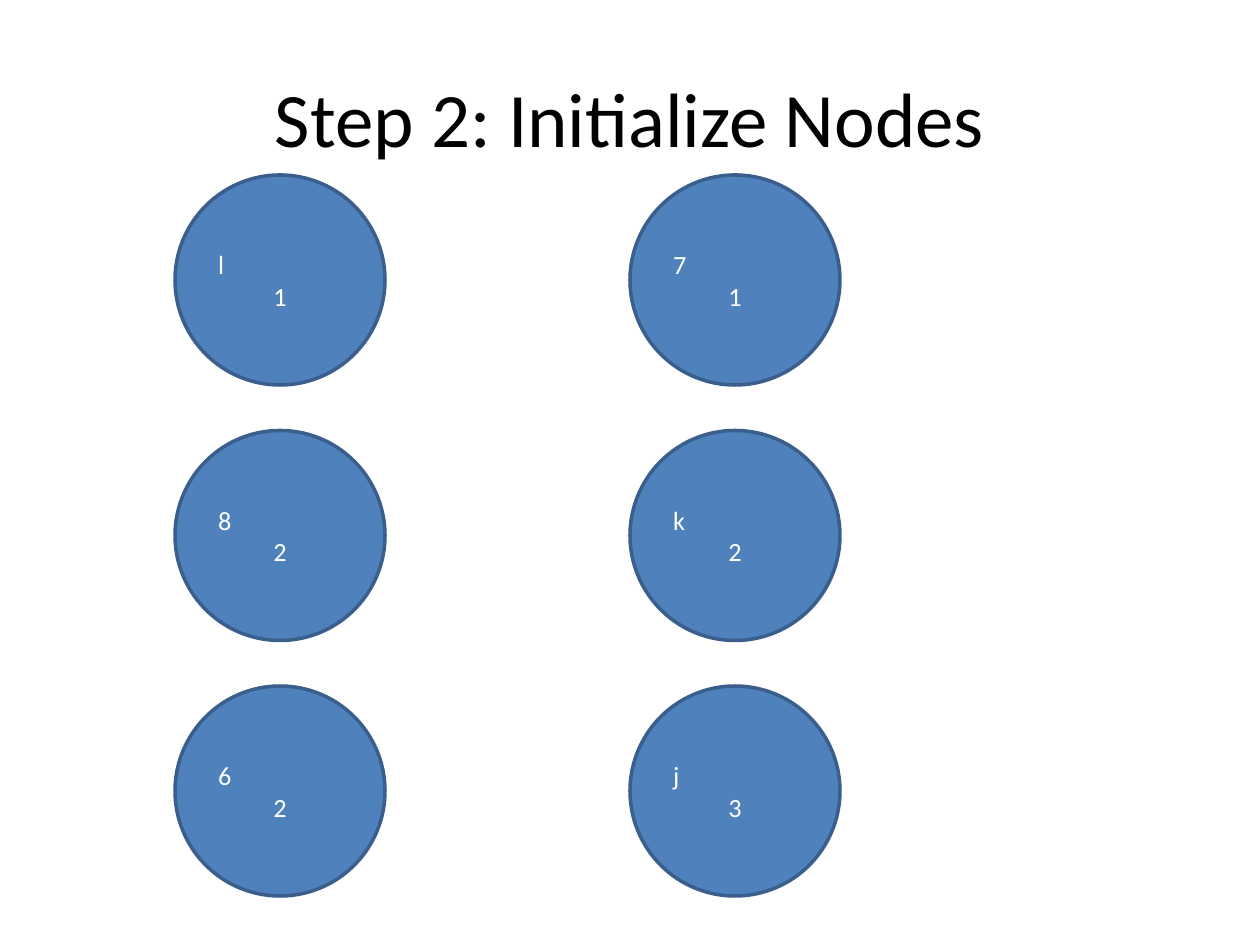
from pptx import Presentation
from pptx.dml.color import RGBColor
from pptx.enum import shapes, text
from pptx.util import Pt

COLORS = {"title": "000000", "node": "4F81BD", "outline": "3A5F8C", "label": "FFFFFF"}
TITLE_FORMAT = {"name": "Calibri", "size": Pt(44)}
LABEL_FORMAT = {"name": "Calibri", "size": Pt(15)}
NODE_ROWS = [
    [("l", "1"), ("7", "1")],
    [("8", "2"), ("k", "2")],
    [("6", "2"), ("j", "3")],
]


def write_line(paragraph, wording, alignment, font_format, color):
    """Fill a paragraph with one formatted run."""
    paragraph.alignment = alignment
    run = paragraph.add_run()
    run.text = wording
    for attribute, value in font_format.items():
        setattr(run.font, attribute, value)
    run.font.color.rgb = RGBColor.from_string(COLORS[color])


def add_title(slide, left, top, width, height, wording):
    """Place the centred slide title in the given box."""
    title = slide.shapes.add_textbox(Pt(left), Pt(top), Pt(width), Pt(height))
    frame = title.text_frame
    frame.word_wrap = True
    frame.vertical_anchor = text.MSO_ANCHOR.MIDDLE
    write_line(frame.paragraphs[0], wording, text.PP_ALIGN.CENTER, TITLE_FORMAT, "title")


def add_node(slide, left, top, diameter, symbol, count):
    """Draw a tree node with its symbol at the left and its count centred below."""
    node = slide.shapes.add_shape(
        shapes.MSO_SHAPE.OVAL, Pt(left), Pt(top), Pt(diameter), Pt(diameter)
    )
    node.shadow.inherit = False
    node.fill.solid()
    node.fill.fore_color.rgb = RGBColor.from_string(COLORS["node"])
    node.line.color.rgb = RGBColor.from_string(COLORS["outline"])
    node.line.width = Pt(2)
    frame = node.text_frame
    frame.word_wrap = True
    frame.vertical_anchor = text.MSO_ANCHOR.MIDDLE
    write_line(frame.paragraphs[0], symbol, text.PP_ALIGN.LEFT, LABEL_FORMAT, "label")
    write_line(frame.add_paragraph(), count, text.PP_ALIGN.CENTER, LABEL_FORMAT, "label")


def add_node_grid(slide, left, top, width, height, diameter, rows):
    """Spread the nodes evenly over the rows and columns of the given box."""
    column_step = (width - diameter) / (len(rows[0]) - 1)
    row_step = (height - diameter) / (len(rows) - 1)
    for row, nodes in enumerate(rows):
        for column, (symbol, count) in enumerate(nodes):
            add_node(slide, left + column * column_step, top + row * row_step,
                     diameter, symbol, count)


def main():
    """Build and save the slide."""
    deck = Presentation()
    deck.slide_width, deck.slide_height = Pt(720), Pt(540)
    slide = deck.slides.add_slide(deck.slide_layouts[6])
    add_title(slide, 36, 21.6, 648, 90, "Step 2: Initialize Nodes")
    add_node_grid(slide, 100, 100, 380, 412, 120, NODE_ROWS)
    deck.save("out.pptx")


if __name__ == "__main__":
    main()
